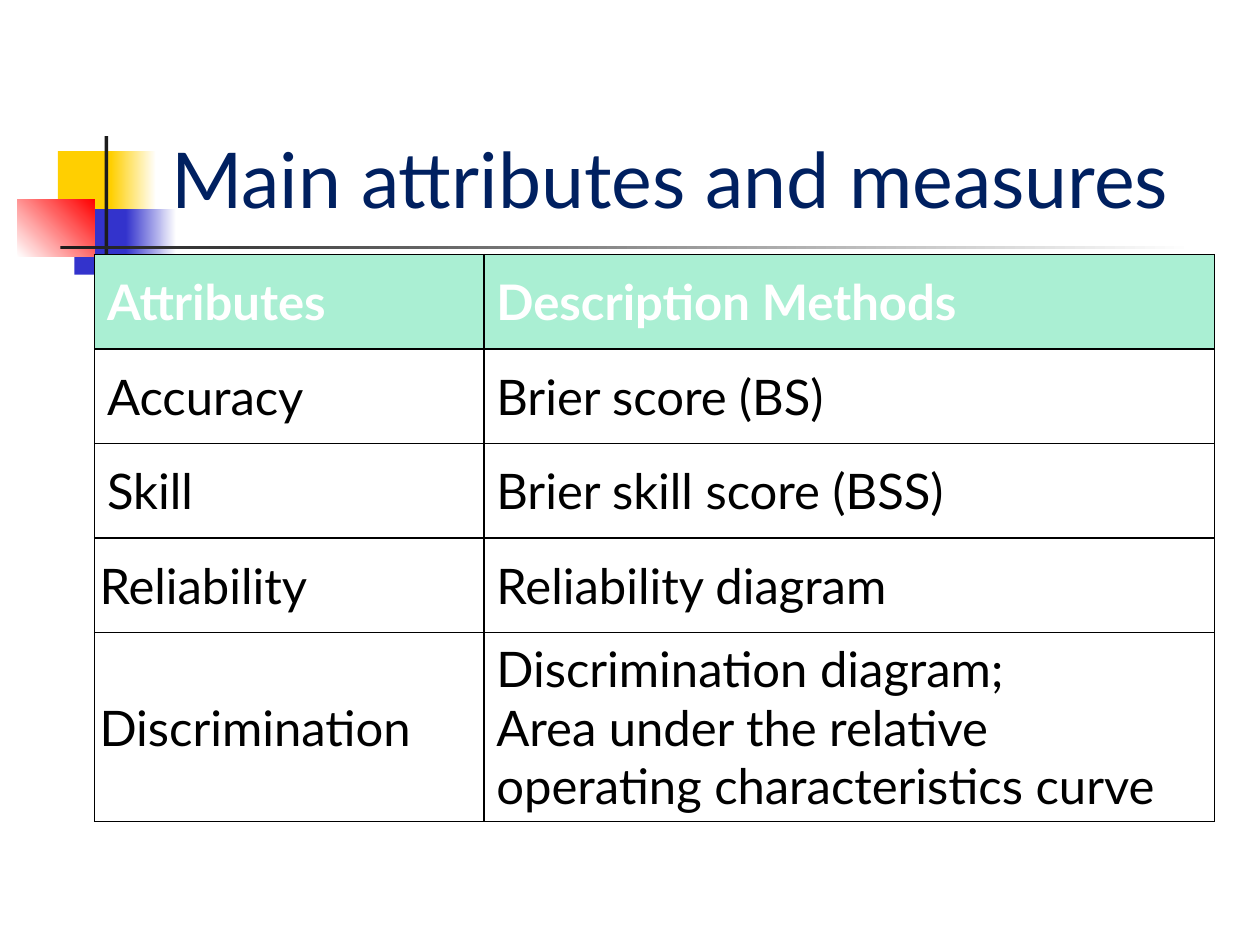
from pptx import Presentation
from pptx.dml.color import RGBColor
from pptx.enum import shapes, text
from pptx.oxml import parse_xml
from pptx.oxml.ns import nsdecls
from pptx.util import Inches, Pt

COLORS = {
    "yellow": "FFCF01",
    "blue": "3333CC",
    "red": "FF0000",
    "dark": "1C1C1C",
    "white": "FFFFFF",
    "black": "000000",
    "navy": "002060",
    "mint": "AAEFD3",
}


def rgb(name):
    return RGBColor.from_string(COLORS[name])


def add_run(p, content, size, color, bold=False):
    r = p.add_run()
    r.text = content
    r.font.name = "Lato"
    r.font.size = Pt(size)
    r.font.bold = bold
    r.font.color.rgb = rgb(color)


prs = Presentation()
prs.slide_width, prs.slide_height = Inches(10), Inches(7.5)
s = prs.slides.add_slide(prs.slide_layouts[5])

decorations = [
    (0.46, 1.2, 0.48, 0.52, ["yellow"], 0),
    (0.88, 1.2, 0.36, 0.52, ["yellow", "white"], 0),
    (0.59, 1.66, 0.46, 0.52, ["blue"], 0),
    (1, 1.66, 0.4, 0.52, ["blue", "white"], 0),
    (0.14, 1.58, 0.61, 0.46, ["white", "red"], 45),
    (0.83, 1.08, 0.03, 1.15, ["dark"], 0),
    (0.48, 1.95, 9, 0.03, ["dark", "white"], 0),
]
for left, top, width, height, fill, angle in decorations:
    sp = s.shapes.add_shape(
        shapes.MSO_SHAPE.RECTANGLE,
        Inches(left), Inches(top), Inches(width), Inches(height),
    )
    sp.shadow.inherit = False
    sp.line.fill.background()
    if len(fill) == 1:
        sp.fill.solid()
        sp.fill.fore_color.rgb = rgb(fill[0])
    else:
        sp.fill.gradient()
        sp.fill.gradient_angle = angle
        for stop, color, position in zip(sp.fill.gradient_stops, fill, (0, 1)):
            stop.color.rgb = rgb(color)
            stop.position = position

rows = [
    ("Attributes", ["Description Methods"]),
    ("Accuracy", ["Brier score (BS)"]),
    ("Skill", ["Brier skill score (BSS)"]),
    ("Reliability", ["Reliability diagram"]),
    ("Discrimination", [
        "Discrimination diagram;",
        "Area under the relative operating characteristics curve",
    ]),
]
table = s.shapes.add_table(
    len(rows), 2, Inches(0.75), Inches(2.02), Inches(8.89), Inches(4.5)
).table
for column, width in zip(table.columns, (3.09, 5.8)):
    column.width = Inches(width)
for row, height in zip(table.rows, (0.75, 0.75, 0.75, 0.75, 1.13)):
    row.height = Inches(height)

for i, (attribute, methods) in enumerate(rows):
    header = i == 0
    for j, lines in enumerate(([attribute], methods)):
        cell = table.cell(i, j)
        cell.vertical_anchor = text.MSO_ANCHOR.MIDDLE
        if j == 0 and i >= 3:
            cell.margin_left = cell.margin_right = Inches(0.04)
            cell.margin_top = cell.margin_bottom = 0
        for k, line in enumerate(lines):
            tf = cell.text_frame
            p = tf.paragraphs[0] if k == 0 else tf.add_paragraph()
            add_run(p, line, 28, "white" if header else "black", header)
        tc_pr = cell._tc.get_or_add_tcPr()
        for side in ("lnL", "lnR", "lnT", "lnB"):
            tc_pr.append(parse_xml(
                f'<a:{side} {nsdecls("a")} w="{Pt(1)}"><a:solidFill>'
                f'<a:srgbClr val="{COLORS["black"]}"/></a:solidFill></a:{side}>'
            ))
        if header:
            cell.fill.solid()
            cell.fill.fore_color.rgb = rgb("mint")
        else:
            cell.fill.background()

title = s.shapes.title
title.left, title.top = Inches(1.26), Inches(0.23)
title.width, title.height = Inches(8.52), Inches(1.6)
tf = title.text_frame
tf.word_wrap = True
tf.auto_size = text.MSO_AUTO_SIZE.NONE
tf.vertical_anchor = text.MSO_ANCHOR.BOTTOM
p = tf.paragraphs[0]
p.alignment = text.PP_ALIGN.LEFT
add_run(p, "Main attributes and measures", 44, "navy")
s.shapes.element.append(title.element)

prs.save("out.pptx")
